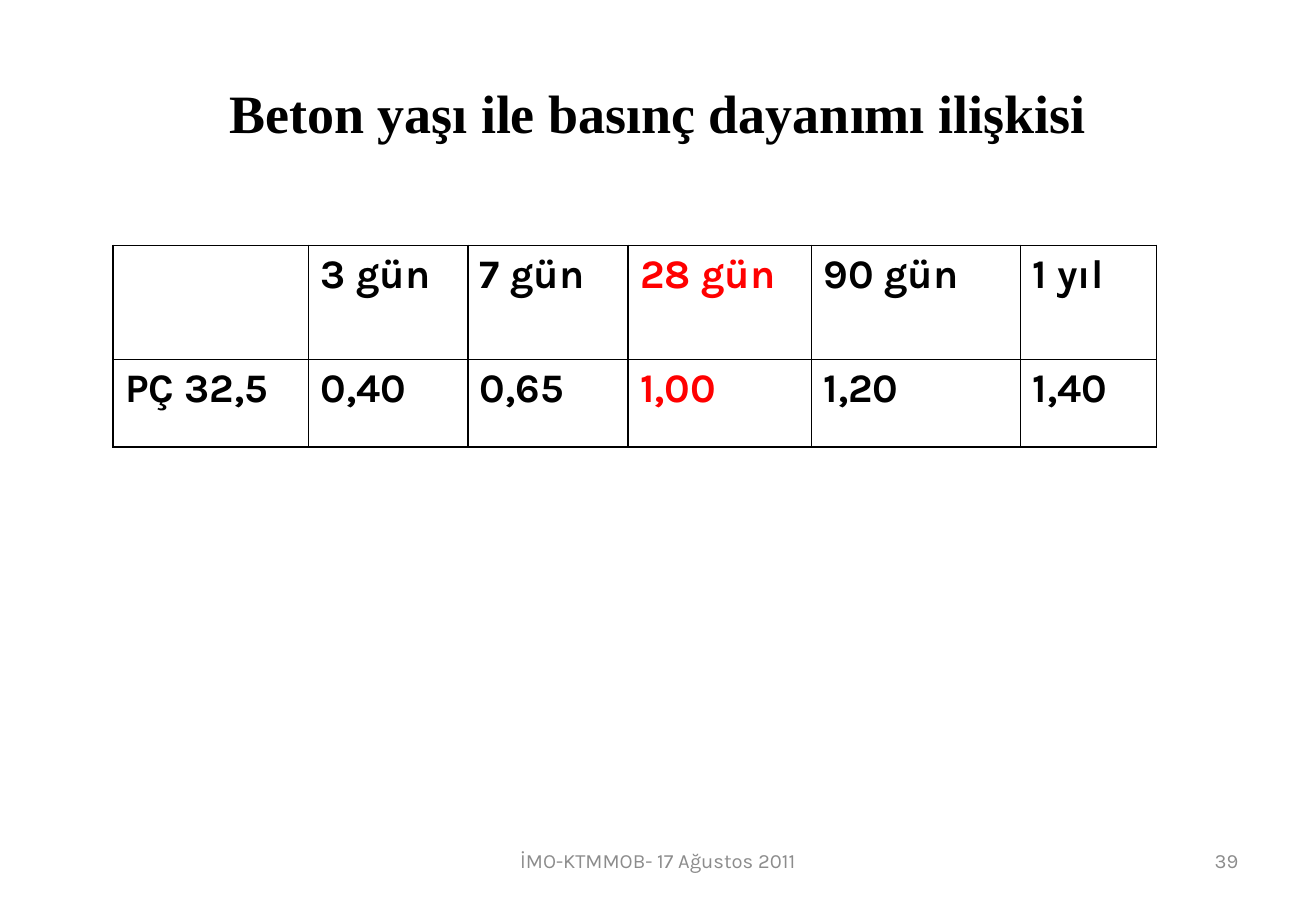
from lxml import etree
from pptx import Presentation
from pptx.dml.color import RGBColor
from pptx.enum.text import MSO_ANCHOR, PP_ALIGN
from pptx.oxml.ns import qn
from pptx.util import Pt

# Content
TITLE = "Beton yaşı ile basınç dayanımı ilişkisi"
ROWS = [
    ["", "3 gün", "7 gün", "28 gün", "90 gün", "1 yıl"],
    ["PÇ 32,5", "0,40", "0,65", "1,00", "1,20", "1,40"],
]
KEY_COL = 3  # reference age of 28 days

# Lengths in px, 100 to the inch
PX = 9144
SLIDE = (1083, 750)
TITLE_BOX = (54, 30, 975, 125)
TABLE_AT = (93, 202)
COLS = [161, 131, 132, 151, 172, 112]
HEIGHTS = [94, 72]
INDENT = 38

BLACK = RGBColor(0, 0, 0)
RED = RGBColor(255, 0, 0)
GREY = RGBColor(0x8C, 0x8C, 0x8C)
WHITE = RGBColor(255, 255, 255)
SERIF, SANS = "Times New Roman", "Karla"
LEFT_EDGE = "a:lnL"
EDGES = (LEFT_EDGE, "a:lnR", "a:lnT", "a:lnB")
MIDDLE = MSO_ANCHOR.MIDDLE
CENTER, RIGHT, JUSTIFY = PP_ALIGN.CENTER, PP_ALIGN.RIGHT, PP_ALIGN.JUSTIFY

FOOTERS = [
    ("İMO-KTMMOB- 17 Ağustos 2011", (370, 683, 343, 50), CENTER),
    ("39", (776, 683, 253, 50), RIGHT),
]


def emu(*sizes):
    return [size * PX for size in sizes]


def style(para, name, size, color, bold, align):
    para.alignment = align
    font = para.font
    font.name, font.size, font.bold = name, Pt(size), bold
    font.color.rgb = color


def border(cell):
    props = cell._tc.get_or_add_tcPr()
    for place, edge in enumerate(EDGES):
        line = etree.Element(qn(edge), w=str(Pt(1)))
        fill = etree.SubElement(line, qn("a:solidFill"))
        etree.SubElement(fill, qn("a:srgbClr"), val=str(BLACK))
        props.insert(place, line)


prs = Presentation()
prs.slide_width, prs.slide_height = emu(*SLIDE)
slide = prs.slides.add_slide(prs.slide_layouts[5])

# Title
title = slide.shapes.title
title.left, title.top, title.width, title.height = emu(*TITLE_BOX)
title.text_frame.text = TITLE
title.text_frame.vertical_anchor = MIDDLE
style(title.text_frame.paragraphs[0], SERIF, 32, BLACK, True, CENTER)

# Strength table
frame = slide.shapes.add_table(
    len(ROWS), len(COLS), *emu(*TABLE_AT, sum(COLS), sum(HEIGHTS)))
table = frame.table
table.first_row = table.horz_banding = False
for col, width in zip(table.columns, COLS):
    col.width = width * PX
for row, height in zip(table.rows, HEIGHTS):
    row.height = height * PX
for r, texts in enumerate(ROWS):
    for c, text in enumerate(texts):
        cell = table.cell(r, c)
        cell.text = text
        cell.fill.solid()
        cell.fill.fore_color.rgb = WHITE
        border(cell)
        para = cell.text_frame.paragraphs[0]
        style(para, SANS, 24, RED if c == KEY_COL else BLACK, True, JUSTIFY)
        props = para._p.get_or_add_pPr()
        props.set("marL", str(INDENT * PX))
        props.set("indent", str(-INDENT * PX))

# Footer and page number
for text, box, align in FOOTERS:
    note = slide.shapes.add_textbox(*emu(*box)).text_frame
    note.word_wrap = True
    note.vertical_anchor = MIDDLE
    note.text = text
    style(note.paragraphs[0], SANS, 12, GREY, False, align)

prs.save("out.pptx")
